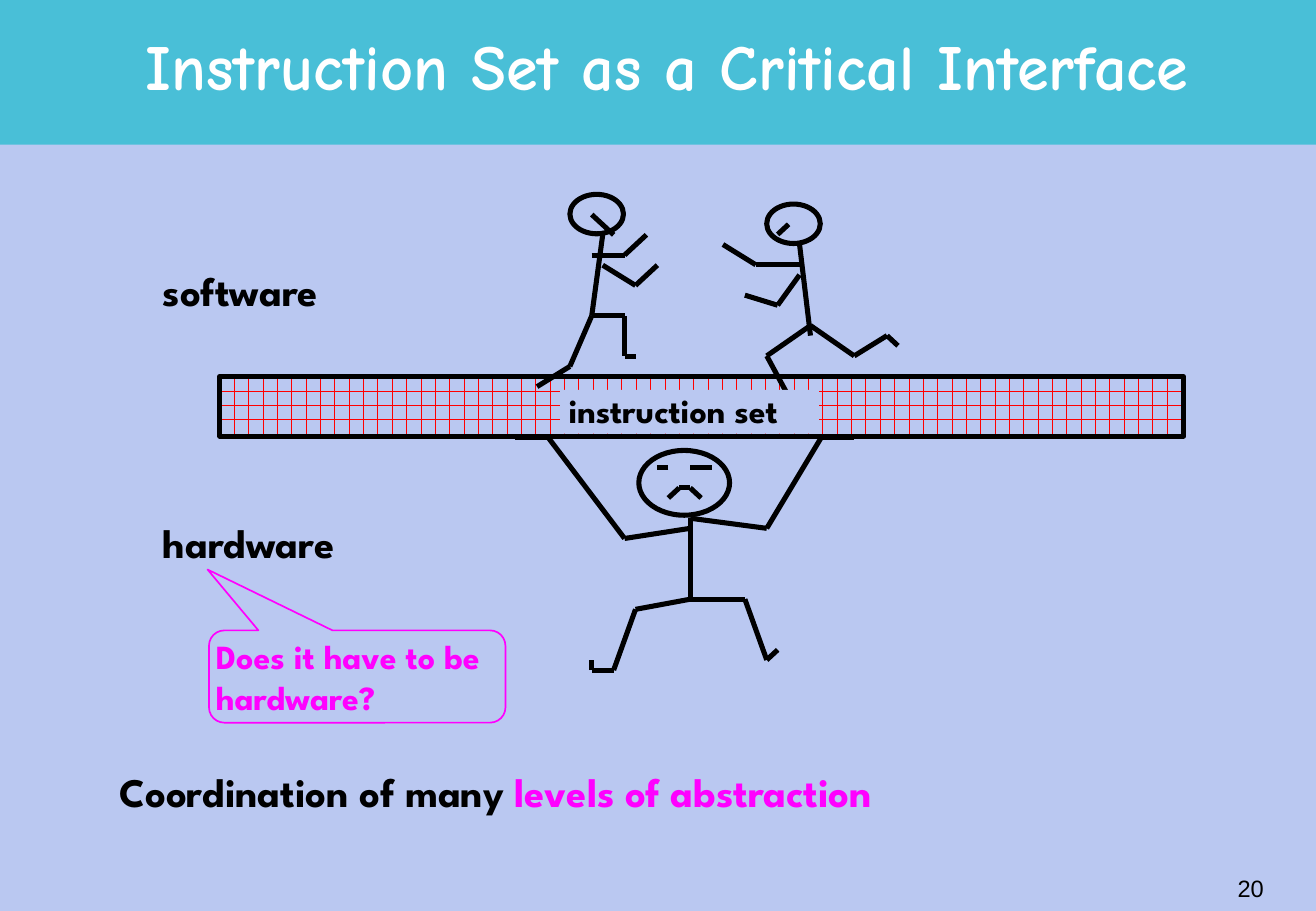
import pptx
import pptx.util
import pptx.dml.color
import pptx.enum.dml
import pptx.enum.shapes
import pptx.enum.text
import pptx.oxml.ns
from dataclasses import dataclass
from lxml import etree

Inches = pptx.util.Inches
Pt = pptx.util.Pt
Kind = pptx.enum.shapes.MSO_SHAPE
Align = pptx.enum.text.PP_ALIGN
Anchor = pptx.enum.text.MSO_ANCHOR


def rgb(code):
    return pptx.dml.color.RGBColor.from_string(code)


@dataclass(frozen=True)
class Theme:
    back = rgb("BAC8F1")
    band = rgb("49BFD7")
    ink = rgb("000000")
    white = rgb("FFFFFF")
    pink = rgb("FF00FF")
    red = rgb("FF0000")
    head = "Comic Neue"
    main = "League Spartan"
    plain = "Arial"
    title = 38
    large = 24
    mid = 20
    small = 14
    pen = 3


# Grid steps of the stick figures, in inches
COL, ROW = 0.09, 1 / 12

# Each figure: head as left, top, width, height; limbs as chains of grid points
LEFT = ((3, 0, 4.9, 3.9), [
    [(6, 4), (5, 12)],
    [(5, 12), (8, 12), (8, 16), (9, 16)],
    [(5, 12), (3, 17), (0, 19)],
    [(6, 7), (9, 9), (11, 7)],
    [(5, 6), (8, 6), (10, 4)],
    [(7, 4), (5, 2)],
])
RIGHT = ((4, 0, 4.9, 3.9), [
    [(7, 4), (8, 13)],
    [(8, 12), (4, 15), (6, 19)],
    [(8, 12), (12, 15), (15, 13), (16, 14)],
    [(7, 7), (5, 10), (2, 9)],
    [(7, 6), (3, 6), (0, 4)],
    [(5, 3), (6, 2)],
])
HOLDER = ((11.3, 1.3, 8.3, 6.4), [
    [(14, 6), (15, 5), (16, 5), (17, 6)],
    [(16, 3), (18, 3)],
    [(14, 3), (13, 3)],
    [(16, 8), (16, 16)],
    [(16, 16), (21, 16), (23, 22), (24, 21)],
    [(16, 16), (11, 17), (9, 23), (7, 23), (7, 22)],
    [(16, 8), (23, 9), (28, 0), (31, 0)],
    [(16, 9), (10, 10), (3, 0), (0, 0)],
])


def place(item, box):
    item.left, item.top, item.width, item.height = map(Inches, box)


def write(shape, runs, size, font=Theme.main, bold=True, align=Align.LEFT,
          anchor=Anchor.TOP, space=1.0, pad=(0.07, 0.03)):
    frame = shape.text_frame
    frame.word_wrap = True
    frame.auto_size = pptx.enum.text.MSO_AUTO_SIZE.NONE
    frame.vertical_anchor = anchor
    frame.margin_left = frame.margin_right = Inches(pad[0])
    frame.margin_top = frame.margin_bottom = Inches(pad[1])
    para = frame.paragraphs[0]
    para.alignment = align
    para.line_spacing = space
    para.space_before = Pt(0)
    for text, color in runs:
        run = para.add_run()
        run.text = text
        run.font.name = font
        run.font.size = Pt(size)
        run.font.bold = bold
        run.font.color.rgb = color


def draw(slide, kind, box, fill=None, line=None, width=Theme.pen):
    shape = slide.shapes.add_shape(kind, *map(Inches, box))
    shape.shadow.inherit = False
    if fill is None:
        shape.fill.background()
    else:
        shape.fill.solid()
        shape.fill.fore_color.rgb = fill
    if line is None:
        shape.line.fill.background()
    else:
        shape.line.color.rgb = line
        shape.line.width = Pt(width)
    return shape


def stroke(slide, start, end):
    line = slide.shapes.add_connector(
        pptx.enum.shapes.MSO_CONNECTOR.STRAIGHT, *map(Inches, start + end))
    line.line.color.rgb = Theme.ink
    line.line.width = Pt(Theme.pen)
    etree.SubElement(line._element.spPr, pptx.oxml.ns.qn("a:effectLst"))


def label(slide, box, text, size, **style):
    note = slide.shapes.add_textbox(*map(Inches, box))
    write(note, [(text, Theme.ink)], size, **style)


def header(slide, box):
    x, y, w, h = box
    band = draw(slide, Kind.RECTANGLE, box, Theme.band)
    # Send the band behind the title
    band._element.getparent().insert(2, band._element)
    title = slide.shapes.title
    place(title, (x - 0.18, y + 0.14, w + 0.51, 0.79))
    write(title, [("Instruction Set as a Critical Interface", Theme.white)],
          Theme.title, Theme.head, align=Align.CENTER,
          anchor=Anchor.MIDDLE, pad=(0.1, 0.05))


def figure(slide, spot, parts):
    x, y = spot
    (left, top, wide, high), limbs = parts
    draw(slide, Kind.OVAL, (x + left * COL, y + top * ROW, wide * COL, high * ROW),
         line=Theme.ink)
    for limb in limbs:
        points = [(x + col * COL, y + row * ROW) for col, row in limb]
        for start, end in zip(points, points[1:]):
            stroke(slide, start, end)


def scene(slide, box):
    x, y, w, h = box
    # Brick wall between the two worlds
    wall = draw(slide, Kind.RECTANGLE, box, line=Theme.ink)
    wall.fill.patterned()
    wall.fill.pattern = pptx.enum.dml.MSO_PATTERN.HORIZONTAL_BRICK
    wall.fill.fore_color.rgb = Theme.red
    wall.fill.back_color.rgb = Theme.back
    # Runners above, holder below
    figure(slide, (x + 2.61, y - 1.5), LEFT)
    figure(slide, (x + 4.14, y - 1.42), RIGHT)
    figure(slide, (x + 2.43, y + 0.5), HOLDER)
    # Name on the wall
    sign = draw(slide, Kind.RECTANGLE, (x + 2.8, y + 0.11, 2.13, 0.36), Theme.back)
    write(sign, [("instruction set", Theme.ink)], Theme.mid, space=0.92)
    # Names of the worlds
    for text, drop in (("software", -0.88), ("hardware", 1.2)):
        label(slide, (x - 0.54, y + drop, 1.84, 0.4), text, Theme.large, space=0.85)


def callout(slide, box):
    bubble = draw(slide, Kind.ROUNDED_RECTANGULAR_CALLOUT, box,
                  line=Theme.pink, width=1)
    for index, value in enumerate((-0.505, -1.16, 0.167)):
        bubble.adjustments[index] = value
    write(bubble, [("Does it have to be hardware?", Theme.pink)], Theme.mid,
          anchor=Anchor.MIDDLE, pad=(0.02, 0.01))


def closing(slide, box):
    body = slide.placeholders[1]
    place(body, box)
    props = body.text_frame.paragraphs[0]._p.get_or_add_pPr()
    props.set("marL", "0")
    props.set("indent", "0")
    etree.SubElement(props, pptx.oxml.ns.qn("a:buNone"))
    write(body, [("Coordination of many ", Theme.ink),
                 ("levels of abstraction", Theme.pink)],
          Theme.large, space=0.9, pad=(0.1, 0.05))


def main():
    deck = pptx.Presentation()
    deck.slide_width, deck.slide_height = Inches(10.83), Inches(7.5)
    slide = deck.slides.add_slide(deck.slide_layouts[1])
    slide.background.fill.solid()
    slide.background.fill.fore_color.rgb = Theme.back
    header(slide, (0, 0, 10.83, 1.19))
    scene(slide, (1.81, 3.1, 7.93, 0.49))
    callout(slide, (1.72, 5.19, 2.44, 0.76))
    closing(slide, (0.88, 6.31, 9.21, 0.55))
    # Page number
    label(slide, (8.24, 7.06, 2.26, 0.5), "20", Theme.small, font=Theme.plain,
          bold=False, align=Align.RIGHT, anchor=Anchor.MIDDLE, pad=(0.1, 0.05))
    deck.save("out.pptx")


if __name__ == "__main__":
    main()
